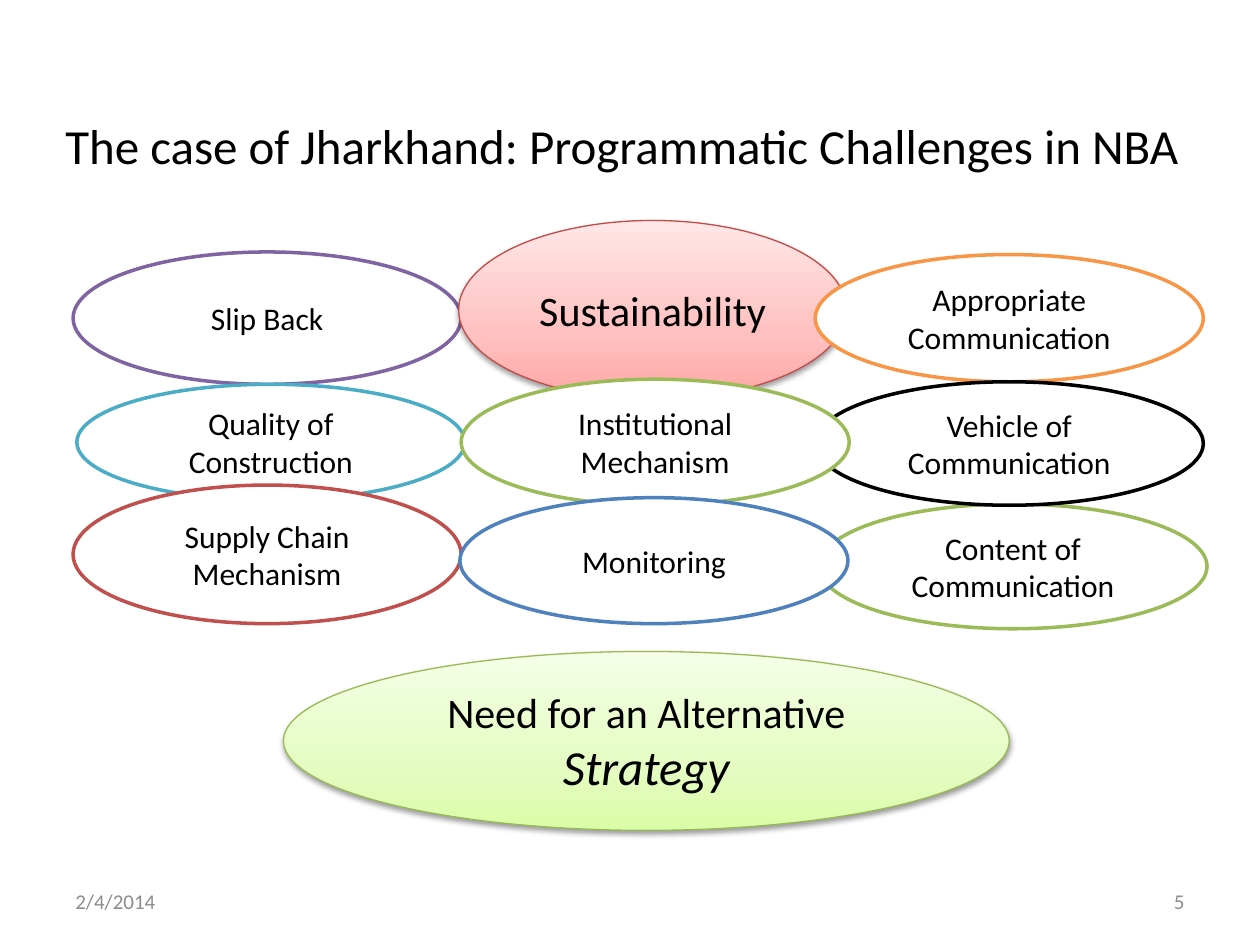
from copy import deepcopy
from dataclasses import dataclass

from lxml import etree
from pptx import Presentation
from pptx.dml.color import RGBColor
from pptx.enum.shapes import MSO_SHAPE
from pptx.enum.text import MSO_ANCHOR, PP_ALIGN
from pptx.oxml.ns import qn
from pptx.util import Inches, Pt

ELLIPSE = MSO_SHAPE.OVAL
MIDDLE = MSO_ANCHOR.MIDDLE
LEFT, CENTER, RIGHT = PP_ALIGN.LEFT, PP_ALIGN.CENTER, PP_ALIGN.RIGHT
BLANK_LAYOUT = 6
OVAL_WIDTH = 3.08


@dataclass(frozen=True)
class Theme:
    font: str = "Calibri"
    text: str = "000000"
    muted: str = "8C8C8C"
    white: str = "FFFFFF"
    purple: str = "8064A2"
    aqua: str = "4BACC6"
    orange: str = "F79646"
    red: str = "C0504D"
    green: str = "9BBB59"
    blue: str = "4F81BD"
    black: str = "000000"
    red_edge: str = "BF4C48"
    green_edge: str = "98B955"
    red_gradient: tuple = ("FFA6A5", "FFC0BF", "FFE7E7")
    green_gradient: tuple = ("DAFDA7", "E4FCC2", "F5FFE7")
    gradient_positions: tuple = (0, 0.35, 1)
    title_size: int = 28
    accent_size: int = 24
    body_size: int = 18
    footer_size: int = 12
    outline: float = 2
    thin_outline: float = 0.75


class SlideBuilder:
    def __init__(self, slide, theme):
        self.slide = slide
        self.theme = theme

    def add_runs(self, shape, runs, alignment, color):
        """Fill a shape with one paragraph of (text, size, italic) runs."""
        frame = shape.text_frame
        frame.word_wrap = True
        frame.vertical_anchor = MIDDLE
        paragraph = frame.paragraphs[0]
        paragraph.alignment = alignment
        for text, size, italic in runs:
            run = paragraph.add_run()
            run.text = text
            run.font.color.rgb = RGBColor.from_string(color)
            font_format = {"name": self.theme.font, "size": Pt(size), "italic": italic}
            for name, value in font_format.items():
                setattr(run.font, name, value)

    def text(self, box, text, size, alignment, color):
        shape = self.slide.shapes.add_textbox(*map(Inches, box))
        self.add_runs(shape, [(text, size, None)], alignment, color)

    def ellipse(self, box, runs, edge, edge_width):
        shape = self.slide.shapes.add_shape(ELLIPSE, *map(Inches, box))
        shape.shadow.inherit = False
        shape.fill.solid()
        shape.fill.fore_color.rgb = RGBColor.from_string(self.theme.white)
        shape.line.color.rgb = RGBColor.from_string(edge)
        shape.line.width = Pt(edge_width)
        self.add_runs(shape, runs, CENTER, self.theme.text)
        return shape

    def challenge(self, left, top, height, text, edge):
        box = (left, top, OVAL_WIDTH, height)
        self.ellipse(box, [(text, self.theme.body_size, None)], edge, self.theme.outline)

    def highlight(self, box, runs, edge, colors):
        shape = self.ellipse(box, runs, edge, self.theme.thin_outline)
        self.gradient(shape, colors)
        self.shadow(shape)

    def gradient(self, shape, colors):
        """Blend three colours from the bottom of the shape to its top."""
        shape.fill.gradient()
        shape.fill.gradient_angle = 90
        stop_list = shape.element.spPr.find(".//" + qn("a:gsLst"))
        stop_list.append(deepcopy(stop_list[0]))
        stops = zip(shape.fill.gradient_stops, self.theme.gradient_positions, colors)
        for stop, position, color in stops:
            stop.position = position
            stop.color.rgb = RGBColor.from_string(color)

    def shadow(self, shape):
        effects = shape.element.spPr.find(qn("a:effectLst"))
        outer = etree.SubElement(effects, qn("a:outerShdw"), blurRad="40000",
                                 dist="20000", dir="5400000", rotWithShape="0")
        color = etree.SubElement(outer, qn("a:srgbClr"), val=self.theme.black)
        etree.SubElement(color, qn("a:alpha"), val="38000")


def main():
    theme = Theme()
    presentation = Presentation()
    presentation.slide_width = Inches(10)
    presentation.slide_height = Inches(7.5)
    slide = presentation.slides.add_slide(presentation.slide_layouts[BLANK_LAYOUT])
    builder = SlideBuilder(slide, theme)

    builder.text((0.42, 0.75, 9.08, 0.8),
                 "The case of Jharkhand: Programmatic Challenges in NBA",
                 theme.title_size, LEFT, theme.text)

    builder.challenge(0.58, 2, 1.05, "Slip Back", theme.purple)
    builder.highlight((3.64, 1.75, OVAL_WIDTH, 1.42),
                      [("Sustainability", theme.accent_size, None)],
                      theme.red_edge, theme.red_gradient)

    # Later ovals overlap earlier ones
    challenges = [
        (0.61, 3.05, 0.92, "Quality of Construction", theme.aqua),
        (6.47, 2.02, 1.01, "Appropriate Communication", theme.orange),
        (0.58, 3.85, 1.1, "Supply Chain Mechanism", theme.red),
        (6.5, 4, 0.99, "Content of Communication", theme.green),
        (6.47, 3.03, 0.98, "Vehicle of Communication", theme.black),
        (3.66, 3.01, 1, "Institutional Mechanism", theme.green),
        (3.65, 3.95, 1, "Monitoring", theme.blue),
    ]
    for challenge in challenges:
        builder.challenge(*challenge)

    builder.highlight((2.25, 5.17, 5.76, 1.42),
                      [("Need for an Alternative ", theme.accent_size, None),
                       ("Strategy", theme.title_size, True)],
                      theme.green_edge, theme.green_gradient)

    for left, text, alignment in [(0.5, "2/4/2014", LEFT), (7.17, "5", RIGHT)]:
        builder.text((left, 6.95, 2.33, 0.4), text, theme.footer_size, alignment, theme.muted)

    presentation.save("out.pptx")


if __name__ == "__main__":
    main()
